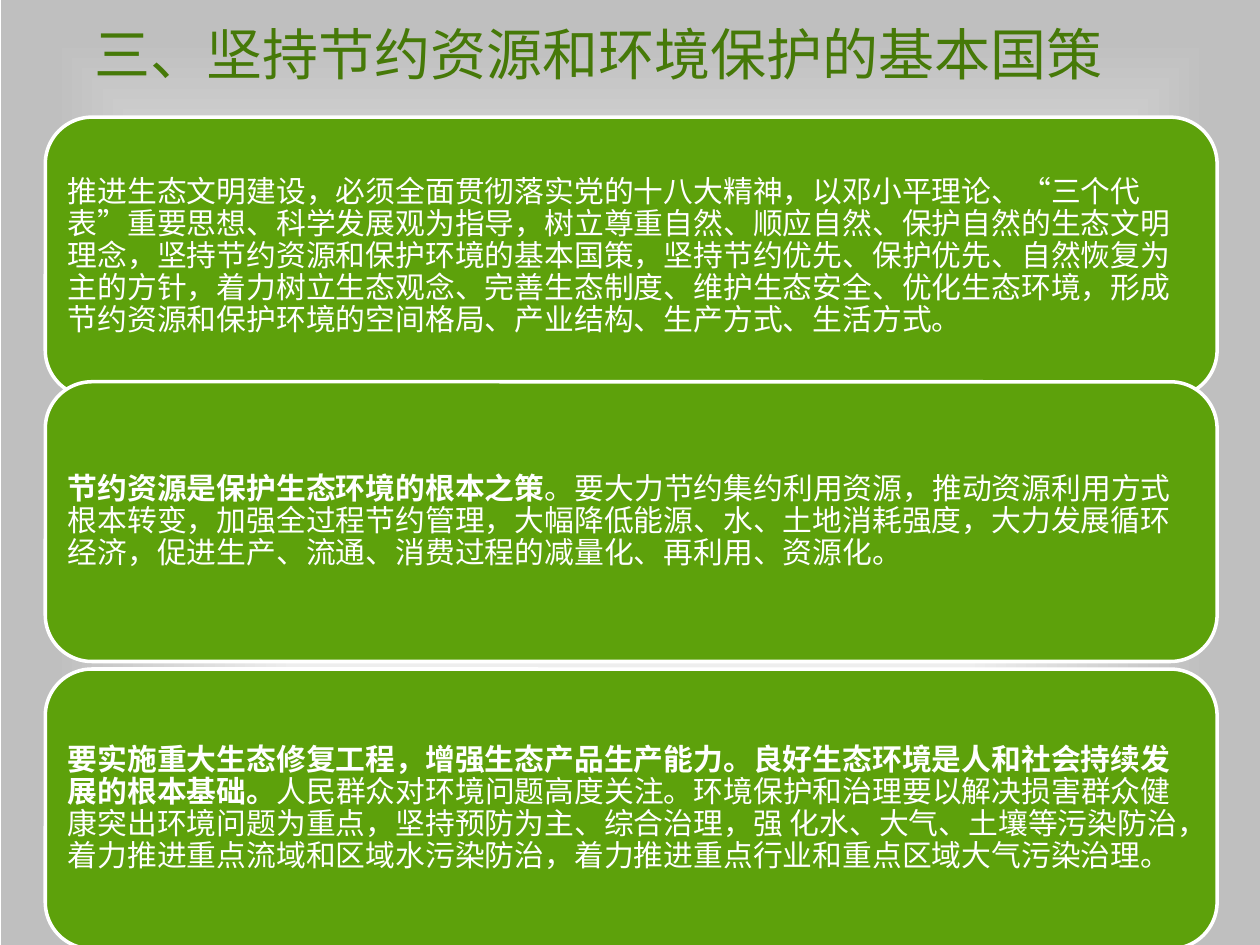
from lxml.etree import SubElement
from pptx import Presentation
from pptx.dml.color import RGBColor
from pptx.enum.shapes import MSO_SHAPE
from pptx.enum.text import MSO_ANCHOR, PP_ALIGN
from pptx.oxml import parse_xml
from pptx.oxml.ns import nsdecls, qn
from pptx.util import Inches, Pt

COLORS = {"white": "FFFFFF", "gray": "BFBFBF", "green": "5DA10B", "title": "467908"}
CJK = "Noto Sans CJK SC"
STOPS = [(0, "white"), (23, "white"), (92, "gray"), (100, "gray")]
TITLE = "三、坚持节约资源和环境保护的基本国策"

# top of each panel, bold lead, plain text
PANELS = [
    (0.93, "",
     "推进生态文明建设，必须全面贯彻落实党的十八大精神，以邓小平理论、“三个代表”重要思想、"
     "科学发展观为指导，树立尊重自然、顺应自然、保护自然的生态文明理念，坚持节约资源和保护环境的"
     "基本国策，坚持节约优先、保护优先、自然恢复为主的方针，着力树立生态观念、完善生态制度、"
     "维护生态安全、优化生态环境，形成节约资源和保护环境的空间格局、产业结构、生产方式、生活方式。"),
    (3.03, "节约资源是保护生态环境的根本之策",
     "。要大力节约集约利用资源，推动资源利用方式根本转变，加强全过程节约管理，大幅降低能源、水、"
     "土地消耗强度，大力发展循环经济，促进生产、流通、消费过程的减量化、再利用、资源化。"),
    (5.31, "要实施重大生态修复工程，增强生态产品生产能力。良好生态环境是人和社会持续发展的根本基础。",
     "人民群众对环境问题高度关注。环境保护和治理要以解决损害群众健康突出环境问题为重点，坚持预防为主、"
     "综合治理，强 化水、大气、土壤等污染防治，着力推进重点流域和区域水污染防治，"
     "着力推进重点行业和重点区域大气污染治理。"),
]


def rgb(name):
    return RGBColor.from_string(COLORS[name])


def put(item, values):
    """Set each attribute of item from a dict."""
    for key, value in values.items():
        setattr(item, key, value)


def add_run(para, text, color, **font):
    run = para.add_run()
    run.text = text
    put(run.font, font)
    run.font.color.rgb = rgb(color)
    SubElement(run.font._element, qn("a:ea"), typeface=CJK)


def add_back(slide):
    """Full-slide backdrop, white in the middle and gray at the edges."""
    back = slide.shapes.add_shape(
        MSO_SHAPE.RECTANGLE, Inches(0.01), 0, Inches(9.99), Inches(7.5))
    back.shadow.inherit = False
    back.line.fill.background()
    stops = "".join(
        f'<a:gs pos="{pos * 1000}"><a:srgbClr val="{COLORS[name]}"/></a:gs>'
        for pos, name in STOPS)
    grad = parse_xml(
        f'<a:gradFill {nsdecls("a")} rotWithShape="1"><a:gsLst>{stops}</a:gsLst>'
        '<a:path path="rect"><a:fillToRect l="50000" t="50000" r="50000" b="50000"/>'
        '</a:path></a:gradFill>')
    back._element.spPr.find(qn("a:prstGeom")).addnext(grad)


def add_title(slide):
    box = slide.shapes.add_textbox(Inches(0.65), 0, Inches(8.31), Inches(0.85))
    frame = box.text_frame
    put(frame, {"word_wrap": True, "vertical_anchor": MSO_ANCHOR.MIDDLE})
    add_run(frame.paragraphs[0], TITLE, "title", size=Pt(32), name=CJK)


def add_panel(slide, top, lead, body):
    panel = slide.shapes.add_shape(
        MSO_SHAPE.ROUNDED_RECTANGLE, Inches(0.36), Inches(top), Inches(9.3), Inches(2.22))
    panel.shadow.inherit = False
    panel.fill.solid()
    panel.fill.fore_color.rgb = rgb("green")
    panel.line.color.rgb = rgb("white")
    panel.line.width = Pt(2)
    frame = panel.text_frame
    put(frame, {"word_wrap": True, "vertical_anchor": MSO_ANCHOR.MIDDLE})
    sides = ("left", "top", "right", "bottom")
    put(frame, {f"margin_{side}": Inches(0.07) for side in sides})
    para = frame.paragraphs[0]
    put(para, {"alignment": PP_ALIGN.LEFT, "line_spacing": 0.9, "space_after": Pt(6)})
    for text, bold in ((lead, True), (body, False)):
        if text:
            add_run(para, text, "white", size=Pt(17), name="Arial", bold=bold)


def main():
    deck = Presentation()
    put(deck, {"slide_width": Inches(10), "slide_height": Inches(7.5)})
    slide = deck.slides.add_slide(deck.slide_layouts[6])
    add_back(slide)
    add_title(slide)
    for top, lead, body in PANELS:
        add_panel(slide, top, lead, body)
    deck.save("out.pptx")


if __name__ == "__main__":
    main()
